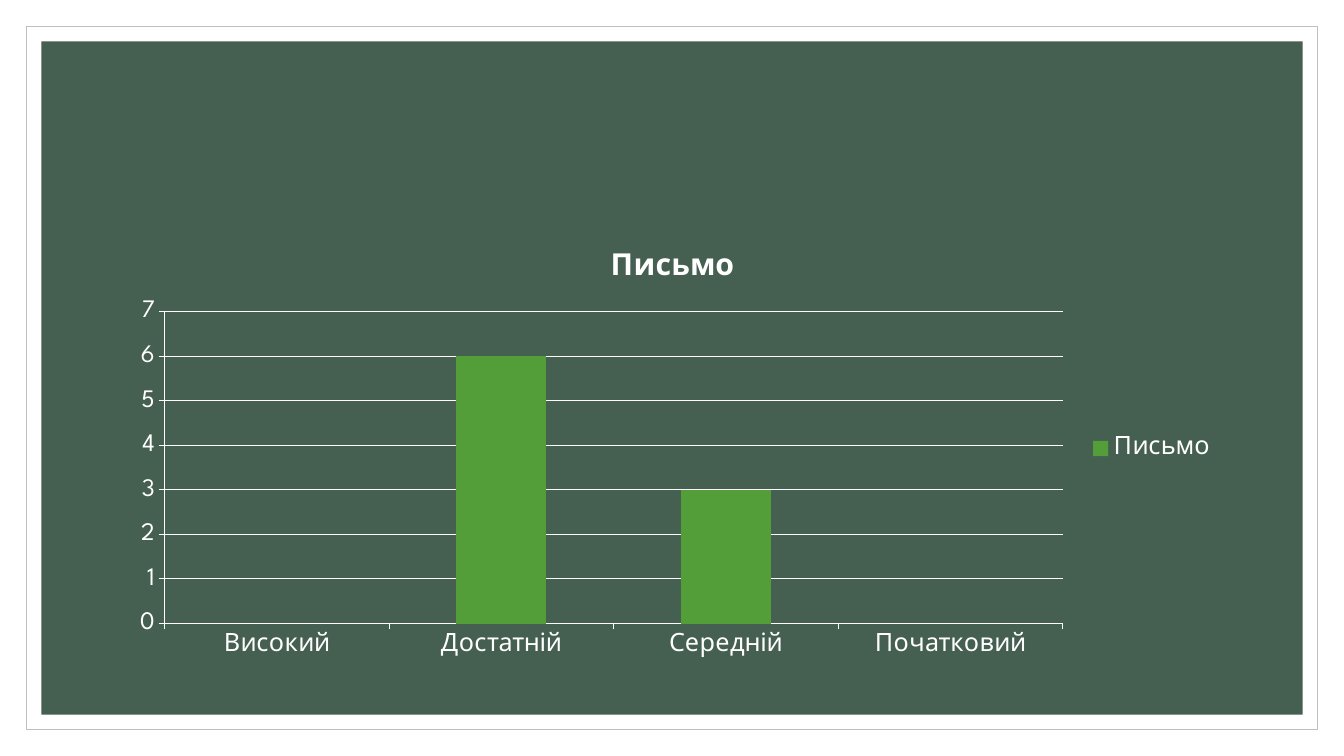
from pptx import Presentation
from pptx.chart.data import CategoryChartData
from pptx.dml.color import RGBColor
from pptx.enum.chart import XL_CHART_TYPE, XL_LEGEND_POSITION, XL_TICK_MARK
from pptx.enum.shapes import MSO_SHAPE
from pptx.util import Inches, Pt

COLORS = {"paper": "FFFFFF", "frame": "BFBFBF", "board": "455F51", "bar": "549E39"}
FONT = "League Spartan"
SLIDE_WIDTH, SLIDE_HEIGHT = 13.33, 7.5


def rgb(name):
    return RGBColor.from_string(COLORS[name])


class SlideBuilder:
    def __init__(self, slide):
        self.slide = slide

    def background(self, color):
        fill = self.slide.background.fill
        fill.solid()
        fill.fore_color.rgb = rgb(color)

    def panel(self, margin, fill, line=None):
        """Add a rectangle set in from every slide edge by margin."""
        panel = self.slide.shapes.add_shape(
            MSO_SHAPE.RECTANGLE, Inches(margin), Inches(margin),
            Inches(SLIDE_WIDTH - 2 * margin), Inches(SLIDE_HEIGHT - 2 * margin))
        panel.shadow.inherit = False
        panel.fill.solid()
        panel.fill.fore_color.rgb = rgb(fill)
        if line:
            panel.line.color.rgb = rgb(line)
            panel.line.width = Pt(0.5)
        else:
            panel.line.fill.background()

    def style_font(self, font, size, bold=False):
        font.name = FONT
        font.size = Pt(size)
        font.bold = bold
        font.color.rgb = rgb("paper")

    def style_line(self, line):
        line.color.rgb = rgb("paper")
        line.width = Pt(0.75)

    def column_chart(self, left, top, width, height, title, levels, counts):
        data = CategoryChartData()
        data.categories = levels
        data.add_series(title, counts)
        chart = self.slide.shapes.add_chart(
            XL_CHART_TYPE.COLUMN_STACKED, Inches(left), Inches(top),
            Inches(width), Inches(height), data).chart
        self.style_font(chart.font, 18)

        chart.has_title = True
        heading = chart.chart_title.text_frame.paragraphs[0]
        heading.text = title
        self.style_font(heading.runs[0].font, 21.6, bold=True)
        chart.chart_title.include_in_layout = False

        chart.has_legend = True
        chart.legend.position = XL_LEGEND_POSITION.RIGHT
        chart.legend.include_in_layout = False

        plot = chart.plots[0]
        plot.gap_width = 150
        plot.overlap = 100
        plot.vary_by_categories = False
        bars = plot.series[0].format.fill
        bars.solid()
        bars.fore_color.rgb = rgb("bar")

        for axis in (chart.category_axis, chart.value_axis):
            axis.major_tick_mark = XL_TICK_MARK.OUTSIDE
            axis.minor_tick_mark = XL_TICK_MARK.NONE
            self.style_line(axis.format.line)
        chart.value_axis.has_major_gridlines = True
        self.style_line(chart.value_axis.major_gridlines.format.line)


def main():
    presentation = Presentation()
    presentation.slide_width = Inches(SLIDE_WIDTH)
    presentation.slide_height = Inches(SLIDE_HEIGHT)
    builder = SlideBuilder(presentation.slides.add_slide(presentation.slide_layouts[6]))

    builder.background("paper")
    builder.panel(0.26, "paper", line="frame")
    builder.panel(0.41, "board")
    builder.column_chart(
        1.17, 2.3, 11, 4.3, "Письмо",
        ["Високий", "Достатній", "Середній", "Початковий"], [None, 6, 3, None])

    presentation.save("out.pptx")


if __name__ == "__main__":
    main()
